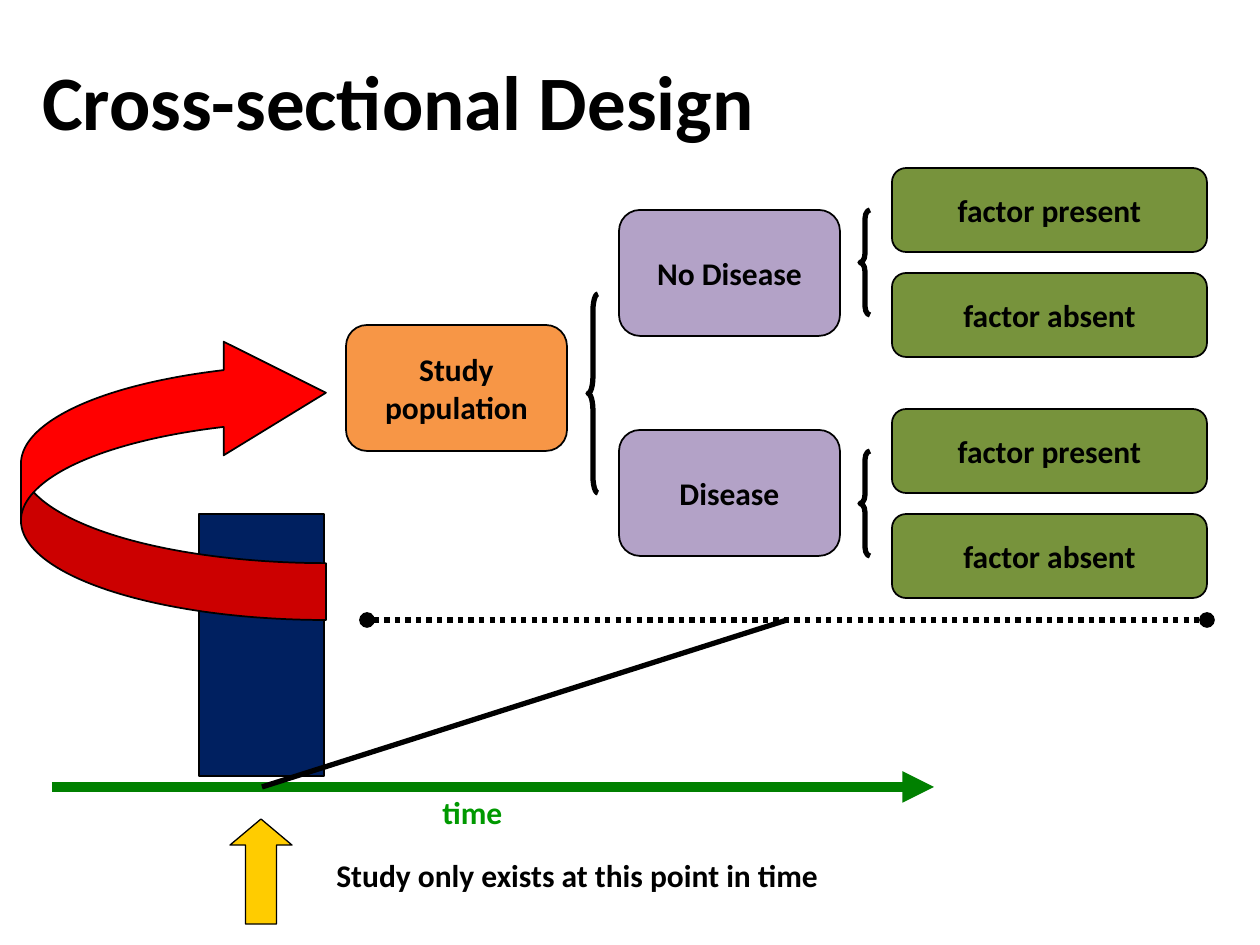
import dataclasses

import lxml.etree
import pptx
import pptx.dml.color
import pptx.enum.dml
import pptx.enum.shapes
import pptx.enum.text
import pptx.oxml.ns
import pptx.util

SHAPE = pptx.enum.shapes.MSO_SHAPE
ALIGN = pptx.enum.text.PP_ALIGN
ANCHOR = pptx.enum.text.MSO_ANCHOR
EMU_PER_PX = 914400 / 126


@dataclasses.dataclass(frozen=True)
class Theme:
    font: str = "Calibri"
    title_size: int = 44
    label_size: int = 18
    ink: str = "000000"
    population: str = "F79646"
    group: str = "B3A2C7"
    factor: str = "77933C"
    sample: str = "002060"
    selection: str = "FF0000"
    moment: str = "FFCC00"
    time_axis: str = "008000"
    time_label: str = "009900"


THEME = Theme()


def px(length):
    return pptx.util.Emu(round(length * EMU_PER_PX))


def rgb(value):
    return pptx.dml.color.RGBColor.from_string(value)


def apply(target, values):
    for name, value in values.items():
        setattr(target, name, value)


def write(frame, lines, size=THEME.label_size, color=THEME.ink, align=ALIGN.LEFT,
          anchor=ANCHOR.TOP, wrap=False):
    apply(frame, {"word_wrap": wrap, "vertical_anchor": anchor})
    for index, line in enumerate(lines):
        paragraph = frame.paragraphs[0] if index == 0 else frame.add_paragraph()
        apply(paragraph, {"text": line, "alignment": align})
        apply(paragraph.font, {"name": THEME.font, "size": pptx.util.Pt(size), "bold": True})
        paragraph.font.color.rgb = rgb(color)


def add_text(slide, box, line, **style):
    write(slide.shapes.add_textbox(*map(px, box)).text_frame, [line], **style)


def add_figure(slide, kind, box, fill=None, weight=1, adjustments=()):
    figure = slide.shapes.add_shape(kind, *map(px, box))
    figure.shadow.inherit = False
    if fill:
        figure.fill.solid()
        figure.fill.fore_color.rgb = rgb(fill)
    else:
        figure.fill.background()
    figure.line.color.rgb = rgb(THEME.ink)
    figure.line.width = pptx.util.Pt(weight)
    for index, value in enumerate(adjustments):
        figure.adjustments[index] = value
    return figure


def add_node(slide, box, fill, *lines):
    node = add_figure(slide, SHAPE.ROUNDED_RECTANGLE, box, fill)
    write(node.text_frame, lines, align=ALIGN.CENTER, anchor=ANCHOR.MIDDLE)


def add_brace(slide, left, top, height):
    width = 10
    add_figure(slide, SHAPE.LEFT_BRACE, (left, top, width, height), weight=3,
               adjustments=(height / width / 12, 0.5))


def add_line(slide, start, end, color=THEME.ink, weight=3, dash=None, ends=None):
    """Draw a straight line; ends maps headEnd or tailEnd to an arrowhead type."""
    line = slide.shapes.add_connector(
        pptx.enum.shapes.MSO_CONNECTOR.STRAIGHT, *map(px, (*start, *end)))
    line.line.color.rgb = rgb(color)
    apply(line.line, {"width": pptx.util.Pt(weight), "dash_style": dash})
    properties = line._element.spPr
    outline = properties.find(pptx.oxml.ns.qn("a:ln"))
    for tag, kind in (ends or {}).items():
        lxml.etree.SubElement(outline, pptx.oxml.ns.qn(f"a:{tag}"), type=kind)
    lxml.etree.SubElement(properties, pptx.oxml.ns.qn("a:effectLst"))


def add_title(slide, box):
    add_text(slide, box, "Cross-sectional Design", size=THEME.title_size,
             align=ALIGN.CENTER, anchor=ANCHOR.MIDDLE, wrap=True)


def add_timeline(slide, box):
    """Time axis with the sampled moment marked above and below it."""
    left, top, width, height = box
    axis_y = top + 273
    add_figure(slide, SHAPE.RECTANGLE, (left + 147, top, 125, 262), THEME.sample)
    add_line(slide, (left, axis_y), (left + width, axis_y), THEME.time_axis, 6,
             ends={"tailEnd": "triangle"})
    add_text(slide, (left + 378, axis_y, 105, 63), "time", color=THEME.time_label)
    add_figure(slide, SHAPE.UP_ARROW, (left + 178, axis_y + 32, 62, height - 305),
               THEME.moment, 0.75, (0.5, 0.42))
    add_text(slide, (left + 272, axis_y + 63, 687, 63),
             "Study only exists at this point in time")


def add_selection_arrow(slide, box):
    arrow = add_figure(slide, SHAPE.CURVED_RIGHT_ARROW, box, THEME.selection,
                       adjustments=(0.2, 0.4, 0.36))
    arrow._element.spPr.find(pptx.oxml.ns.qn("a:xfrm")).set("flipV", "1")


def add_branch(slide, box, group, group_offset):
    """One disease group and the factor levels found in it."""
    left, top, width, height = box
    factor_width, factor_height = 315, 84
    add_node(slide, (left, top + group_offset, 221, 126), THEME.group, group)
    add_brace(slide, left + 241, top + factor_height / 2, height - factor_height)
    for factor, factor_top in (("factor present", top),
                               ("factor absent", top + height - factor_height)):
        add_node(slide, (left + width - factor_width, factor_top,
                         factor_width, factor_height), THEME.factor, factor)


def add_study_tree(slide, box):
    left, top, width, height = box
    branch_left, branch_height = 273, 189
    add_node(slide, (left, top + 157, 221, 126), THEME.population, "Study", "population")
    add_brace(slide, left + 242, top + 126, 199)
    for group, branch_top, group_offset in (("No Disease", top, 42),
                                            ("Disease", top + height - branch_height, 21)):
        add_branch(slide, (left + branch_left, branch_top, width - branch_left,
                           branch_height), group, group_offset)


def add_study_span(slide, box):
    """Dotted extent of the study, tied to its moment on the time axis."""
    left, top, width, height = box
    add_line(slide, (left + 105, top), (left + width, top),
             dash=pptx.enum.dml.MSO_LINE.ROUND_DOT,
             ends={"headEnd": "oval", "tailEnd": "oval"})
    add_line(slide, (left, top + height), (left + 525, top))


def main():
    deck = pptx.Presentation()
    apply(deck, {"slide_width": px(1260), "slide_height": px(945)})
    slide = deck.slides.add_slide(deck.slide_layouts[6])
    add_title(slide, (10, 42, 777, 116))
    add_timeline(slide, (52, 514, 882, 410))
    add_selection_arrow(slide, (21, 336, 305, 284))
    add_study_tree(slide, (346, 168, 861, 430))
    add_study_span(slide, (262, 620, 945, 167))
    deck.save("out.pptx")


if __name__ == "__main__":
    main()
